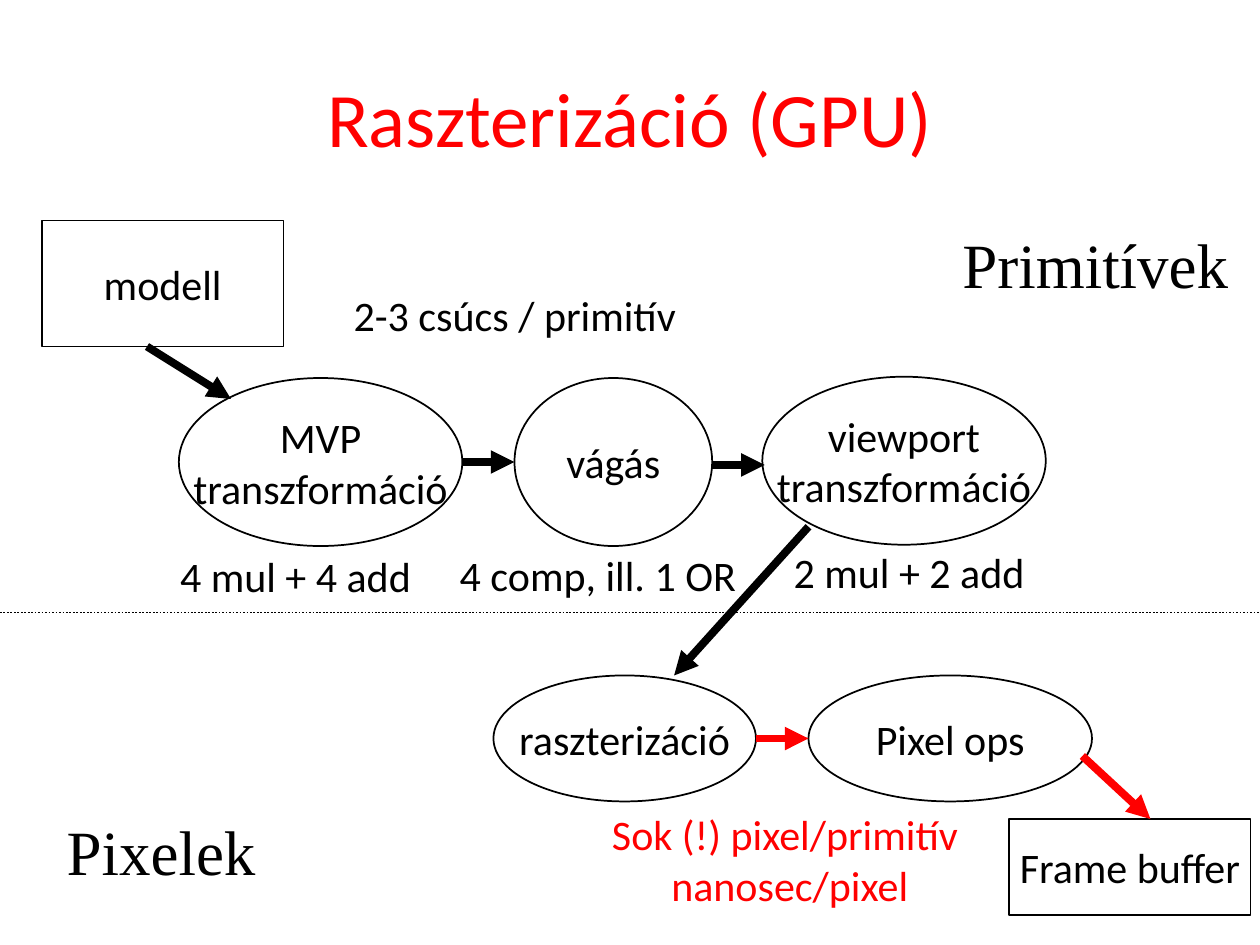
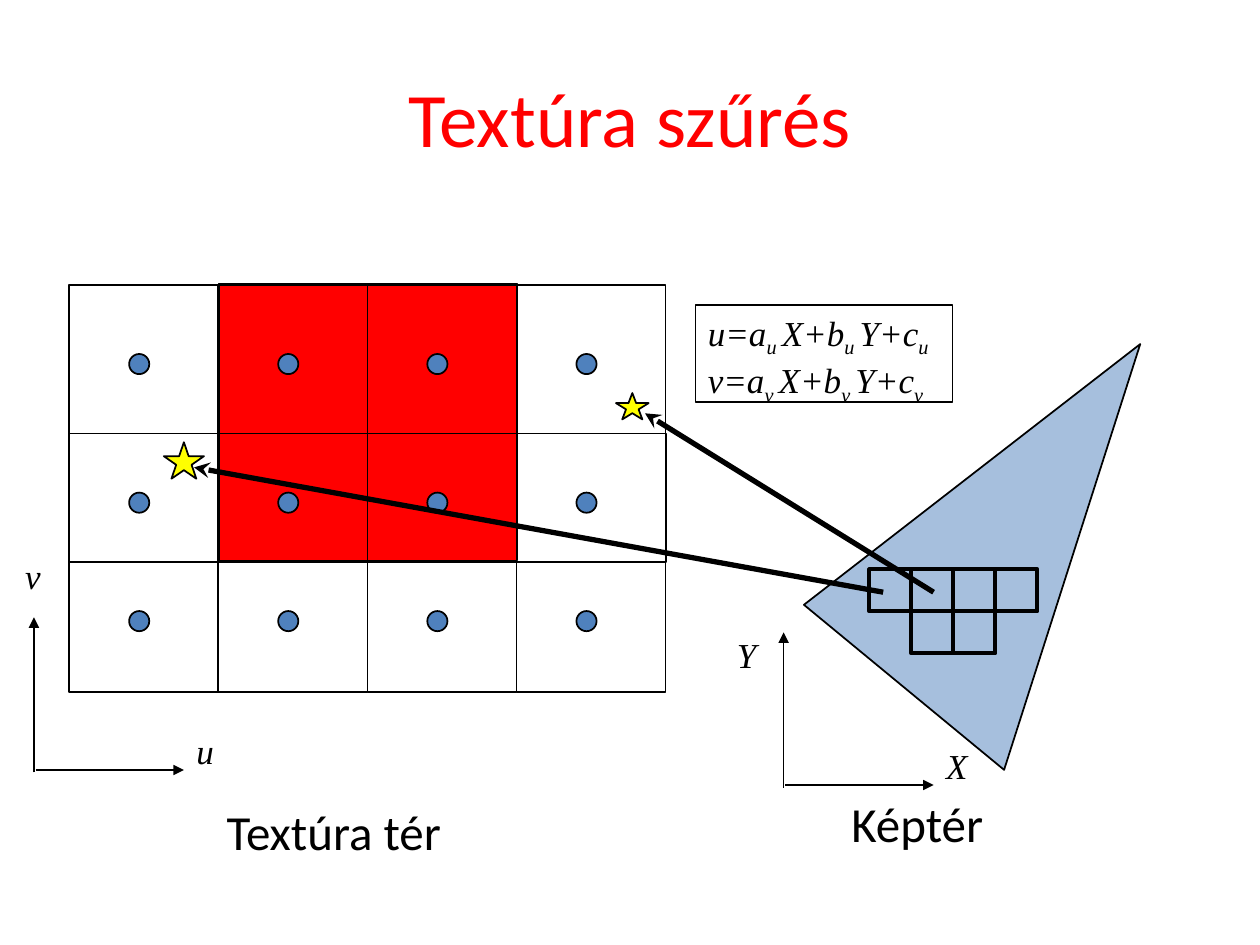
from itertools import product

from lxml.etree import SubElement
from pptx import Presentation
from pptx.dml.color import RGBColor
from pptx.enum.dml import MSO_LINE
from pptx.enum.shapes import MSO_CONNECTOR, MSO_SHAPE as SHAPE
from pptx.enum.text import MSO_ANCHOR as ANCHOR, MSO_AUTO_SIZE as AUTO, PP_ALIGN as ALIGN
from pptx.oxml.ns import qn
from pptx.util import Pt

COLORS = {
    "ink": "000000",
    "accent": "FF0000",
    "texel": "4F81BD",
    "sample": "FFFF00",
}
TITLE = {"name": "Calibri", "size": Pt(44)}
BODY = {"name": "Calibri", "size": Pt(24)}
CAPTION = {"name": "Calibri", "size": Pt(28)}
STAGE = {"name": "Times New Roman", "size": Pt(36)}
MATH = {"name": "Times New Roman", "size": Pt(20), "italic": True}
CENTERED = {"word_wrap": False, "vertical_anchor": ANCHOR.MIDDLE}
GROWING = {"word_wrap": False, "vertical_anchor": ANCHOR.TOP, "auto_size": AUTO.SHAPE_TO_FIT_TEXT}


def rgb(color):
    """Return the named colour."""
    return RGBColor.from_string(COLORS[color])


def points(*lengths):
    """Convert lengths in points to slide units."""
    return [Pt(length) for length in lengths]


def assign(target, values):
    """Set every attribute in values on target."""
    for name, value in values.items():
        setattr(target, name, value)


def write(frame, lines, font, color="ink", align=ALIGN.LEFT, layout=GROWING):
    """Write lines into a frame; odd pieces of a tuple line are subscripts."""
    assign(frame, layout)
    for row, line in enumerate(lines):
        paragraph = frame.add_paragraph() if row else frame.paragraphs[0]
        paragraph.alignment = align
        pieces = (line,) if isinstance(line, str) else line
        for index, piece in enumerate(pieces):
            run = paragraph.add_run()
            run.text = piece
            assign(run.font, font)
            run.font.color.rgb = rgb(color)
            if index % 2:
                run.font._element.set("baseline", "-25000")


def add_titled_slide(deck, heading):
    """Add a title-only slide with the shared red title."""
    slide = deck.slides.add_slide(deck.slide_layouts[5])
    title = slide.shapes.title
    assign(title, dict(zip(("left", "top", "width", "height"), points(36, 21.6, 648, 90))))
    write(title.text_frame, [heading], TITLE, "accent", ALIGN.CENTER,
          {"word_wrap": True, "vertical_anchor": ANCHOR.MIDDLE, "auto_size": AUTO.NONE})
    return slide.shapes


def paint(shape, fill=None, weight=1):
    """Give a shape its outline and an optional fill, without a shadow."""
    shape.shadow.inherit = False
    if fill:
        shape.fill.solid()
        shape.fill.fore_color.rgb = rgb(fill)
    else:
        shape.fill.background()
    shape.line.color.rgb = rgb("ink")
    shape.line.width = Pt(weight)


def add_figure(shapes, kind, box, fill=None, weight=1):
    """Add an outlined preset shape."""
    figure = shapes.add_shape(kind, *points(*box))
    paint(figure, fill, weight)
    return figure


def add_step(shapes, kind, box, *lines):
    """Add a pipeline step with centred text."""
    step = add_figure(shapes, kind, box)
    write(step.text_frame, lines, BODY, align=ALIGN.CENTER, layout=CENTERED)


def add_label(shapes, box, lines, font=BODY, color="ink", align=ALIGN.LEFT):
    """Add a free-standing label."""
    label = shapes.add_textbox(*points(*box))
    write(label.text_frame, lines, font, color, align)


def add_line(shapes, start, end, weight=1, color="ink", head=None, dash=None):
    """Add a straight line with an optional arrowhead."""
    line = shapes.add_connector(MSO_CONNECTOR.STRAIGHT, *points(*start, *end))
    line.line.color.rgb = rgb(color)
    line.line.width = Pt(weight)
    if dash:
        line.line.dash_style = dash
    if head:
        SubElement(line.line._get_or_add_ln(), qn("a:tailEnd"), type=head)
    SubElement(line._element.spPr, qn("a:effectLst"))


def add_triangle(shapes, first, *others):
    """Add the half-transparent image-space triangle."""
    builder = shapes.build_freeform(*points(*first))
    builder.add_line_segments([points(*corner) for corner in others], close=True)
    triangle = builder.convert_to_shape()
    paint(triangle, "texel")
    fill_color = triangle._element.spPr.find(qn("a:solidFill"))[0]
    SubElement(fill_color, qn("a:alpha"), val="50000")


def add_axes(shapes, origin, across, up, up_offset):
    """Add a pair of axes with their letters."""
    x, y = origin
    add_line(shapes, origin, (x, y - 88.6), head="triangle")
    add_line(shapes, (x + 1, y - 1.4), (x + 85.7, y - 1.4), head="triangle")
    add_label(shapes, (x + 85.7, y - 28.1, 27, 36), [across], MATH)
    add_label(shapes, (x + up_offset[0], y + up_offset[1], 27, 36), [up], MATH)


def build_rasterization(deck):
    """Build the rasterization pipeline slide."""
    shapes = add_titled_slide(deck, "Raszterizáció (GPU)")
    steps = [
        (SHAPE.OVAL, (102.2, 216, 162, 96), "MVP", "transzformáció"),
        (SHAPE.OVAL, (294, 216, 113, 96), "vágás"),
        (SHAPE.OVAL, (435.6, 215.3, 162, 96), "viewport", "transzformáció"),
        (SHAPE.OVAL, (282, 386, 150, 72), "raszterizáció"),
        (SHAPE.OVAL, (462, 386, 162, 72), "Pixel ops"),
        (SHAPE.RECTANGLE, (576.7, 468, 138, 54.7), "Frame buffer"),
        (SHAPE.RECTANGLE, (24, 126, 138, 72), "modell"),
    ]
    for step in steps:
        add_step(shapes, *step)

    flows = [
        ((84, 198), (132, 228), "ink"),
        ((264, 264), (294, 264), "ink"),
        ((407, 265.7), (437, 265.7), "ink"),
        ((462, 301), (385.2, 386), "ink"),
        ((432, 422), (462, 422), "accent"),
        ((618.5, 432), (657.4, 468), "accent"),
    ]
    for start, end, color in flows:
        add_line(shapes, start, end, 4.5, color, "triangle")
    add_line(shapes, (0, 350), (720, 350), dash=MSO_LINE.ROUND_DOT)

    costs = [
        ((195, 162, 200, 36), "2-3 csúcs / primitív"),
        ((95.8, 311, 153.4, 36), "4 mul + 4 add"),
        ((255.6, 310.3, 179.3, 36), "4 comp, ill. 1 OR"),
        ((446.4, 308.9, 153.4, 36), "2 mul + 2 add"),
    ]
    for box, cost in costs:
        add_label(shapes, box, [cost])
    add_label(shapes, (341.3, 458.6, 214.6, 65.5),
              ["Sok (!) pixel/primitív", " nanosec/pixel"], color="accent", align=ALIGN.CENTER)
    add_label(shapes, (542.9, 125.3, 167.8, 51), ["Primitívek"], STAGE)
    add_label(shapes, (31, 460.8, 123.8, 51), ["Pixelek"], STAGE)


def build_texture_filtering(deck):
    """Build the texture filtering slide."""
    shapes = add_titled_slide(deck, "Textúra szűrés")
    left, top, column, pixel = 39.6, 162.7, 85.2, 24
    add_figure(shapes, SHAPE.RECTANGLE, (125.3, 162, 170, 158.4), "accent")
    for index in range(4):
        add_figure(shapes, SHAPE.RECTANGLE, (left + index * column, top, column, 232.6))
    add_figure(shapes, SHAPE.RECTANGLE, (left, 247.7, 4 * column, 73.4))
    for texel_top, index in product((202.3, 281.5, 349.2), range(4)):
        add_figure(shapes, SHAPE.OVAL, (73.8 + index * column, texel_top, 11.5, 11.5), "texel")
    add_figure(shapes, SHAPE.STAR_5_POINT, (93.6, 252.7, 23, 20.9), "sample")

    add_triangle(shapes, (573.8, 439.9), (459.4, 345.6), (651.6, 196.6))
    for row, columns in enumerate((range(4), range(1, 3))):
        for index in columns:
            corner = (496.8 + index * pixel, 325.4 + row * pixel)
            add_figure(shapes, SHAPE.RECTANGLE, (*corner, pixel, pixel), weight=2.25)
    add_line(shapes, (504.7, 338.4), (110.9, 267.1), 3, head="stealth")
    add_figure(shapes, SHAPE.STAR_5_POINT, (352, 224.6, 18.7, 15.1), "sample")
    add_line(shapes, (533.5, 338.4), (368.6, 236.2), 3, head="stealth")

    add_label(shapes, (122.4, 454.3, 137.5, 41), ["Textúra tér"], CAPTION)
    add_label(shapes, (479.5, 450, 91.4, 41), ["Képtér"], CAPTION)
    mapping = add_figure(shapes, SHAPE.RECTANGLE, (397.4, 174.2, 146.9, 55.4))
    formulas = [(f"{axis}=a", f"{axis} ", "X+b", f"{axis} ", "Y+c", axis) for axis in "uv"]
    write(mapping.text_frame, formulas, MATH)
    add_axes(shapes, (447.8, 450), "X", "Y", (-33.8, -91.4))
    add_axes(shapes, (19.4, 441.4), "u", "v", (-12.2, -128.2))


def main():
    """Build and save the deck."""
    deck = Presentation()
    deck.slide_width, deck.slide_height = points(720, 540)
    build_rasterization(deck)
    build_texture_filtering(deck)
    deck.save("out.pptx")


if __name__ == "__main__":
    main()
